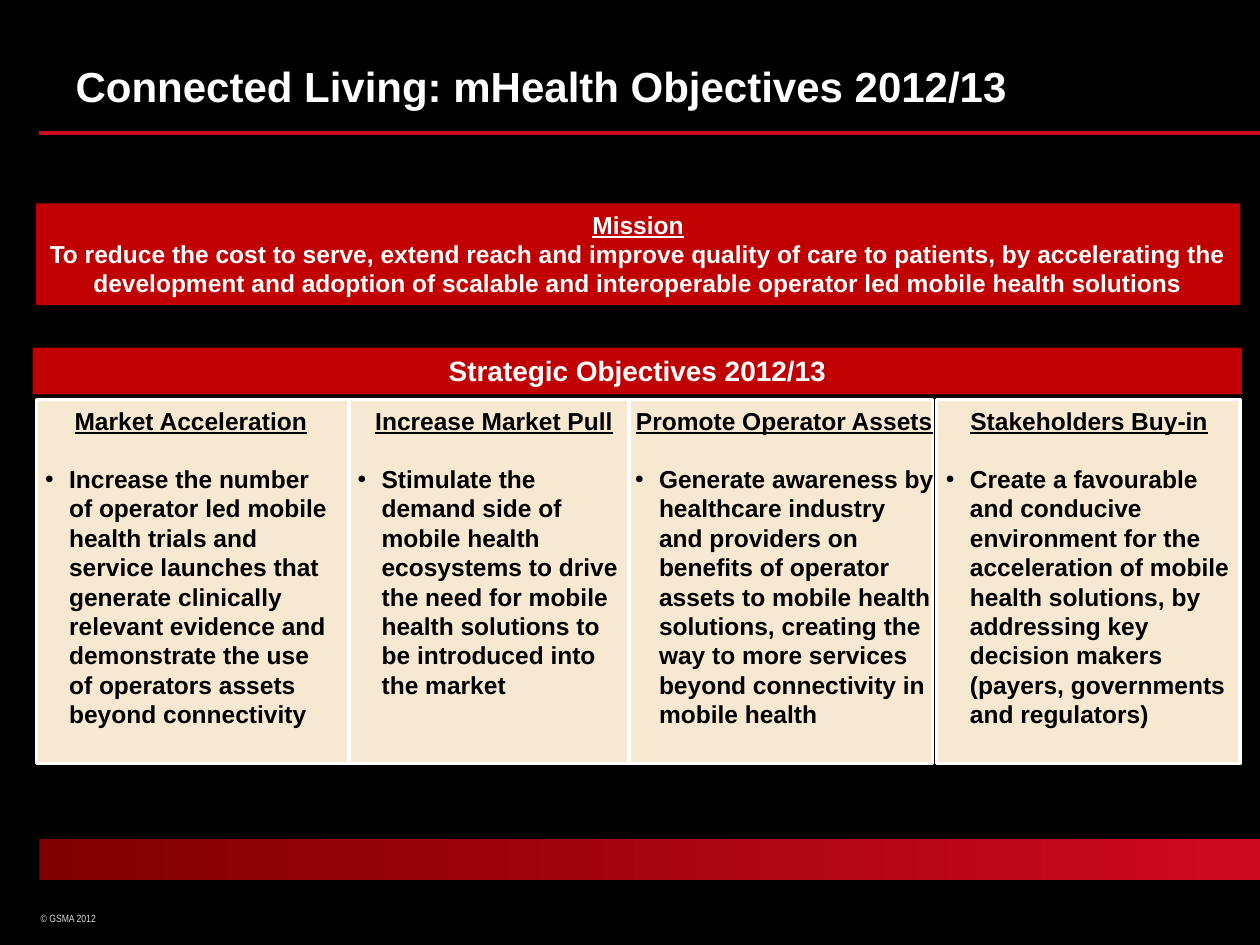
import pptx
import pptx.dml.color
import pptx.enum.shapes
import pptx.enum.text
import pptx.oxml.xmlchemy
import pptx.util

Pt = pptx.util.Pt
RGBColor = pptx.dml.color.RGBColor
OxmlElement = pptx.oxml.xmlchemy.OxmlElement
ALIGN = pptx.enum.text.PP_ALIGN
ANCHOR = pptx.enum.text.MSO_ANCHOR

BLACK = RGBColor(0x00, 0x00, 0x00)
WHITE = RGBColor(0xFF, 0xFF, 0xFF)
LIGHT_GREY = RGBColor(0xDD, 0xDD, 0xDD)
RED = RGBColor(0xC0, 0x00, 0x00)
BRIGHT_RED = RGBColor(0xCD, 0x09, 0x21)
DARK_RED = RGBColor(0x80, 0x00, 0x00)
CREAM = RGBColor(0xF7, 0xE8, 0xD1)

PANEL_TOP = 228.25
PANEL_HEIGHT = 208
BULLET_INDENT = 13.7

MISSION = (
    "To reduce the cost to serve, extend reach and improve quality of care to "
    "patients, by accelerating the development and adoption of scalable and "
    "interoperable operator led mobile health solutions"
)

OBJECTIVES = [
    (188.6, 173.5, 197.3, 170, 7.2, "Increase Market Pull",
     "Stimulate the demand side of mobile health ecosystems to drive the need "
     "for mobile health solutions to be introduced into the market"),
    (359.3, 173.5, 357.1, 182.2, 5.8, "Promote Operator Assets",
     "Generate awareness by healthcare industry and providers on benefits of "
     "operator assets to mobile health solutions, creating the way to more "
     "services beyond connectivity in mobile health"),
    (535, 173.5, 533.5, 177.8, 7.2, "Stakeholders Buy-in",
     "Create a favourable and conducive environment for the acceleration of "
     "mobile health solutions, by addressing key decision makers (payers, "
     "governments and regulators)"),
    (20.9, 178.6, 18.7, 180.7, 7.2, "Market Acceleration",
     "Increase the number of operator led mobile health trials and service "
     "launches that generate clinically relevant evidence and demonstrate the "
     "use of operators assets beyond connectivity"),
]


def in_points(box):
    return [Pt(length) for length in box]


def style_runs(para, size, color, bold=True, underline=False, name="Arial"):
    for span in para.runs:
        span.font.name = name
        span.font.size = Pt(size)
        span.font.bold = bold
        span.font.underline = underline
        span.font.color.rgb = color


def add_rectangle(page, box):
    rectangle = page.shapes.add_shape(
        pptx.enum.shapes.MSO_SHAPE.RECTANGLE, *in_points(box))
    rectangle.shadow.inherit = False
    rectangle.line.fill.background()
    return rectangle


def add_title(page, box):
    title = page.shapes.title
    title.left, title.top, title.width, title.height = in_points(box)
    frame = title.text_frame
    frame.text = "Connected Living: mHealth Objectives 2012/13"
    frame.vertical_anchor = ANCHOR.MIDDLE
    frame.paragraphs[0].alignment = ALIGN.LEFT
    style_runs(frame.paragraphs[0], 24, WHITE)


def add_title_rule(page, box):
    left, top, width, height = in_points(box)
    rule = page.shapes.add_connector(
        pptx.enum.shapes.MSO_CONNECTOR.STRAIGHT, left, top, left + width, top + height)
    rule.line.color.rgb = BRIGHT_RED
    rule.line.width = Pt(2.25)
    rule._element.spPr.append(OxmlElement("a:effectLst"))


def add_footer_band(page, box):
    band = add_rectangle(page, box)
    band.fill.gradient()
    band.fill.gradient_angle = 0
    for stop, color, position in zip(
            band.fill.gradient_stops, (DARK_RED, BRIGHT_RED), (0, 1)):
        stop.color.rgb = color
        stop.position = position


def add_copyright(page, box):
    notice = page.shapes.add_textbox(*in_points(box))
    frame = notice.text_frame
    frame.word_wrap = True
    frame.margin_left = Pt(0.7)
    frame.text = "© GSMA 2012"
    style_runs(frame.paragraphs[0], 6, LIGHT_GREY, bold=False, name="Arial Narrow")


def add_banner(page, box, lines, size, underline_first=False):
    banner = add_rectangle(page, box)
    banner.fill.solid()
    banner.fill.fore_color.rgb = RED
    frame = banner.text_frame
    frame.word_wrap = True
    frame.vertical_anchor = ANCHOR.TOP
    frame.text = "\n".join(lines)
    for index, para in enumerate(frame.paragraphs):
        para.alignment = ALIGN.CENTER
        style_runs(para, size, WHITE, underline=underline_first and index == 0)


def add_panel(page, box):
    panel = add_rectangle(page, box)
    panel.fill.solid()
    panel.fill.fore_color.rgb = CREAM
    panel.line.color.rgb = WHITE
    panel.line.width = Pt(2)


def add_bullet(para):
    properties = para._p.get_or_add_pPr()
    properties.set("marL", str(Pt(BULLET_INDENT)))
    properties.set("indent", str(-Pt(BULLET_INDENT)))
    font = OxmlElement("a:buFont")
    font.set("typeface", "Arial")
    mark = OxmlElement("a:buChar")
    mark.set("char", "•")
    properties.extend([font, mark])


def add_objective(page, box, inset, heading, body):
    objective = page.shapes.add_textbox(*in_points(box))
    frame = objective.text_frame
    frame.word_wrap = True
    frame.margin_left = frame.margin_right = Pt(inset)
    frame.text = heading
    frame.paragraphs[0].alignment = ALIGN.CENTER
    style_runs(frame.paragraphs[0], 14, BLACK, underline=True)
    para = frame.add_paragraph()
    para.text = body
    add_bullet(para)
    para.space_before = Pt(16.5)
    style_runs(para, 14, BLACK)


def add_objectives(page, top, height):
    for left, width, *_ in OBJECTIVES:
        add_panel(page, (left, top, width, height))
    for _, _, left, width, inset, heading, body in OBJECTIVES:
        add_objective(page, (left, top, width, height), inset, heading, body)


def main():
    deck = pptx.Presentation()
    deck.slide_width, deck.slide_height = Pt(720), Pt(540)
    page = deck.slides.add_slide(deck.slide_layouts.get_by_name("Title Only"))
    page.background.fill.solid()
    page.background.fill.fore_color.rgb = BLACK

    add_copyright(page, (22.5, 517.7, 112.5, 14.4))
    add_title_rule(page, (22.5, 75.75, 697.5, 0))
    add_footer_band(page, (22.5, 479.5, 697.5, 23.25))
    add_title(page, (36, 21.6, 648, 54.7))
    add_banner(page, (20.6, 116.2, 688, 58.2), ["Mission", MISSION], 14, True)
    add_objectives(page, PANEL_TOP, PANEL_HEIGHT)
    add_banner(page, (18.7, 198.7, 691, 26.7), ["Strategic Objectives 2012/13"], 16)
    deck.save("out.pptx")


if __name__ == "__main__":
    main()
